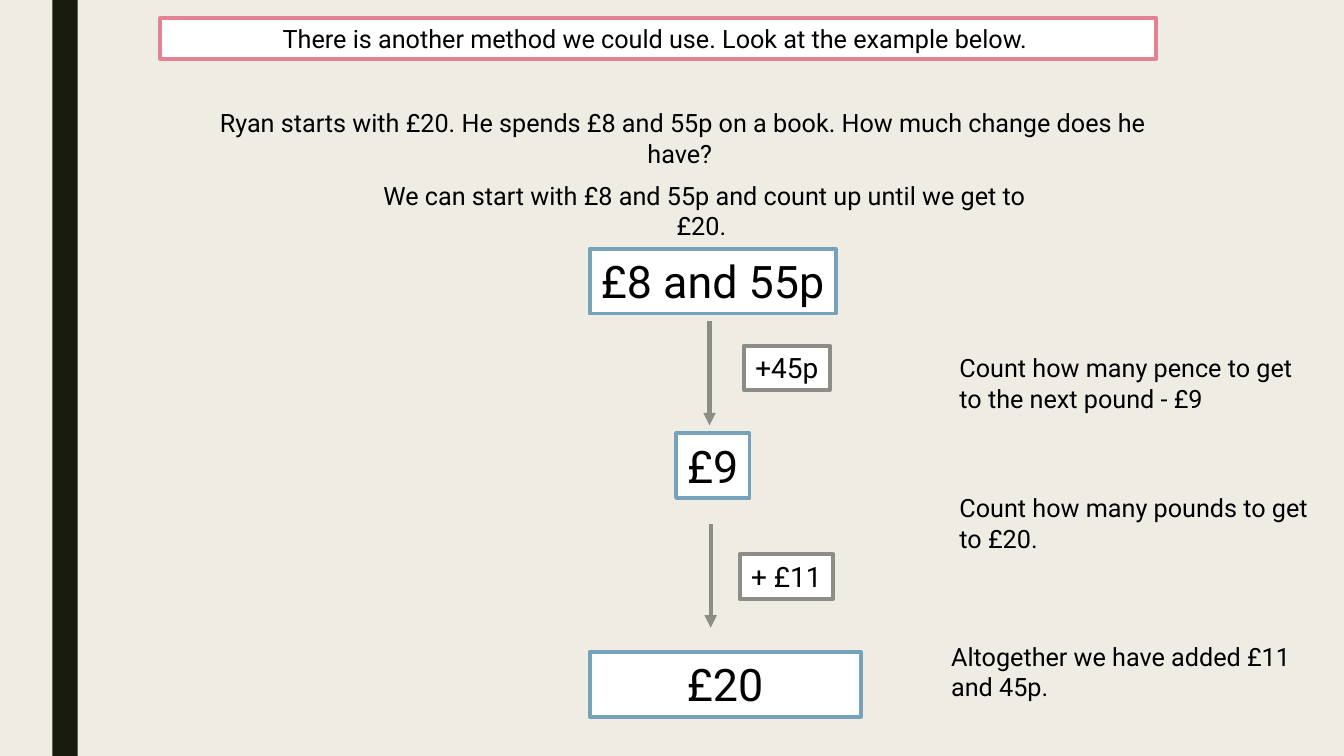
import pptx
import pptx.util
import pptx.dml.color
import pptx.enum.shapes
import pptx.enum.text
import pptx.oxml
import pptx.oxml.ns
from dataclasses import dataclass

Cm = pptx.util.Cm
Pt = pptx.util.Pt
Align = pptx.enum.text.PP_ALIGN


@dataclass(frozen=True)
class Theme:
    font: str = "Roboto"
    paper: str = "EFEDE3"
    band: str = "191B0E"
    ink: str = "000000"
    white: str = "FFFFFF"
    pink: str = "E28394"
    blue: str = "77A2BB"
    grey: str = "8C8D86"
    body: int = 18
    step: int = 20
    total: int = 32
    edge: float = 2.75
    arrow: float = 3


def color(code):
    return pptx.dml.color.RGBColor.from_string(code)


class Board:
    """Holds the theme and the slide being drawn."""

    def __init__(self, slide, theme):
        self.slide = slide
        self.theme = theme
        back = slide.background.fill
        back.solid()
        back.fore_color.rgb = color(theme.paper)

    def rect(self, place, fill, line=None):
        shape = self.slide.shapes.add_shape(
            pptx.enum.shapes.MSO_SHAPE.RECTANGLE, *map(Cm, place))
        shape.shadow.inherit = False
        shape.fill.solid()
        shape.fill.fore_color.rgb = color(fill)
        if line:
            shape.line.color.rgb = color(line)
            shape.line.width = Pt(self.theme.edge)
        else:
            shape.line.fill.background()
        return shape

    def letter(self, shape, text, size, align, wrap=True):
        frame = shape.text_frame
        frame.word_wrap = wrap
        frame.auto_size = pptx.enum.text.MSO_AUTO_SIZE.SHAPE_TO_FIT_TEXT
        frame.vertical_anchor = pptx.enum.text.MSO_ANCHOR.TOP
        para = frame.paragraphs[0]
        para.alignment = align
        run = para.add_run()
        run.text = text
        run.font.name = self.theme.font
        run.font.size = Pt(size)
        run.font.color.rgb = color(self.theme.ink)

    def box(self, place, text, size, line, wrap=False):
        shape = self.rect(place, self.theme.white, line)
        self.letter(shape, text, size, Align.CENTER, wrap)

    def label(self, place, text, align=Align.LEFT):
        shape = self.slide.shapes.add_textbox(*map(Cm, place))
        self.letter(shape, text, self.theme.body, align)

    def arrow(self, x, top, end):
        link = self.slide.shapes.add_connector(
            pptx.enum.shapes.MSO_CONNECTOR.STRAIGHT,
            Cm(x), Cm(top), Cm(x), Cm(end))
        link.line.color.rgb = color(self.theme.grey)
        link.line.width = Pt(self.theme.arrow)
        names = pptx.oxml.ns.nsdecls("a")
        props = link.element.spPr
        props.find(pptx.oxml.ns.qn("a:ln")).append(
            pptx.oxml.parse_xml(f'<a:tailEnd {names} type="triangle"/>'))
        props.append(pptx.oxml.parse_xml(f"<a:effectLst {names}/>"))


def main():
    deck = pptx.Presentation()
    deck.slide_width, deck.slide_height = Cm(33.87), Cm(19.05)
    theme = Theme()
    board = Board(deck.slides.add_slide(deck.slide_layouts[6]), theme)

    # Side band and heading
    board.rect((1.32, 0, 0.64, 19.05), theme.band)
    board.box((4.04, 0.46, 25.1, 1.02),
              "There is another method we could use. Look at the example below. ",
              theme.body, theme.pink, wrap=True)

    # Problem and plan
    board.label((4.75, 2.59, 24.92, 1.02),
                "Ryan starts with £20. He spends £8 and 55p on a book. "
                "How much change does he have? ", Align.CENTER)
    board.label((8.84, 4.42, 17.83, 1.02),
                "We can start with £8 and 55p and count up until we get to £20. ",
                Align.CENTER)

    # Amounts on the way up
    for left, top, width, text, wrap in (
            (14.86, 6.27, 6.2, "£8 and 55p", False),
            (17.04, 10.92, 1.85, "£9", False),
            (14.86, 16.43, 6.83, "£20", True)):
        board.box((left, top, width, 1.63), text, theme.total, theme.blue, wrap)

    # Arrows with the amount added
    for x, top, end in ((17.88, 8.08, 10.72), (17.91, 13.21, 15.82)):
        board.arrow(x, top, end)
    for left, top, width, text in ((18.75, 8.71, 2.16, "+45p"),
                                   (18.64, 13.97, 2.36, "+ £11")):
        board.box((left, top, width, 1.12), text, theme.step, theme.grey)

    # Notes at the right, sharing one right edge
    edge = 33.28
    for left, top, text in (
            (23.93, 8.76, "Count how many pence to get to the next pound - £9"),
            (23.93, 12.29, "Count how many pounds to get to £20."),
            (23.72, 16.03, "Altogether we have added £11 and 45p.")):
        board.label((left, top, edge - left, 1.8), text)

    deck.save("out.pptx")


if __name__ == "__main__":
    main()
